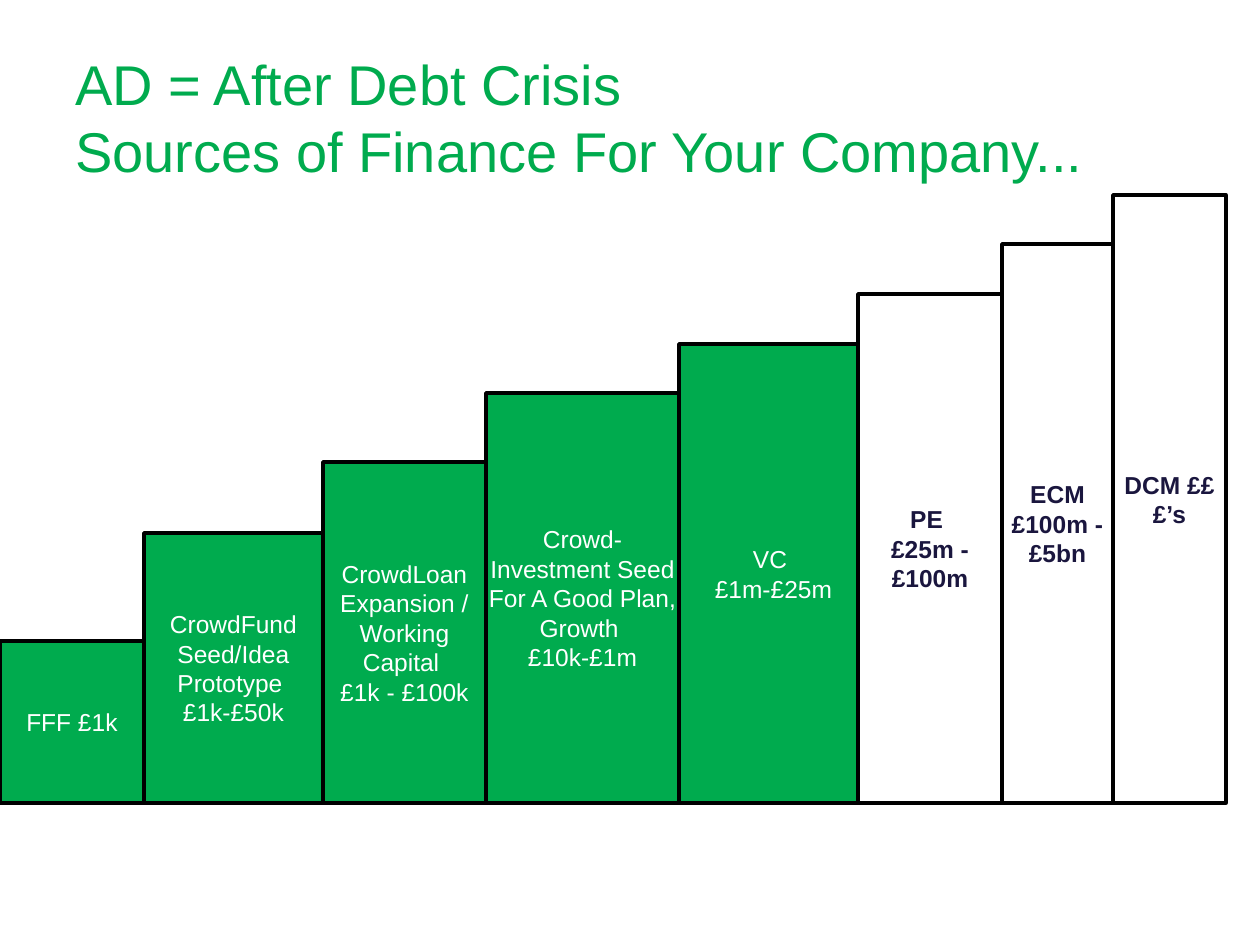
from pptx import Presentation
from pptx import util as u
from pptx.dml.color import RGBColor
from pptx.enum import shapes, text

PX = 914400 / 126
COLORS = {"green": "00AB4E", "white": "FFFFFF", "navy": "1A163E", "black": "000000"}
FONT = "Arial"
BASELINE = 803

TITLE = ["AD = After Debt Crisis", "Sources of Finance For Your Company..."]
TITLE_BOX = (63, 38, 1134, 157)

# left, top, width, highlighted, paragraphs (each a list of lines)
STEPS = [
    (0, 641, 144, True, [["FFF £1k"]]),
    (144, 533, 179, True, [["CrowdFund Seed/Idea Prototype "], ["£1k-£50k"]]),
    (323, 462, 163, True, [["CrowdLoan Expansion / Working Capital "], ["£1k - £100k"]]),
    (486, 393, 193, True, [["Crowd-Investment Seed For A Good Plan, Growth "], ["£10k-£1m"]]),
    (679, 344, 189, True, [["VC "], ["£1m-£25m"]]),
    (858, 294, 144, False, [["PE ", "£25m - £100m"]]),
    (1002, 244, 111, False, [["ECM £100m - £5bn"]]),
    (1113, 195, 113, False, [["DCM £££’s"]]),
]


def px(n):
    return u.Emu(round(n * PX))


def rgb(name):
    return RGBColor.from_string(COLORS[name])


def add_lines(p, lines, size, color, bold=False):
    """Fill a paragraph with runs parted by line breaks."""
    for i, line in enumerate(lines):
        if i:
            p.add_line_break()
        r = p.add_run()
        r.text = line
        r.font.name, r.font.size, r.font.bold = FONT, u.Pt(size), bold
        r.font.color.rgb = rgb(color)


def add_title(slide):
    tf = slide.shapes.add_textbox(*map(px, TITLE_BOX)).text_frame
    tf.word_wrap = True
    tf.vertical_anchor = text.MSO_ANCHOR.MIDDLE
    add_lines(tf.paragraphs[0], TITLE, 32, "green")


def add_step(slide, left, top, width, highlighted, paragraphs):
    sp = slide.shapes.add_shape(shapes.MSO_SHAPE.RECTANGLE, px(left), px(top),
                                px(width), px(BASELINE - top))
    sp.shadow.inherit = False
    sp.fill.solid()
    sp.fill.fore_color.rgb = rgb("green" if highlighted else "white")
    sp.line.color.rgb = rgb("black")
    sp.line.width = u.Pt(2)
    tf = sp.text_frame
    tf.word_wrap = True
    tf.vertical_anchor = text.MSO_ANCHOR.MIDDLE
    tf.margin_left = tf.margin_top = tf.margin_right = tf.margin_bottom = 0
    for i, lines in enumerate(paragraphs):
        p = tf.add_paragraph() if i else tf.paragraphs[0]
        p.alignment = text.PP_ALIGN.CENTER
        add_lines(p, lines, 14, "white" if highlighted else "navy", not highlighted)


def main():
    prs = Presentation()
    prs.slide_width, prs.slide_height = px(1260), px(945)
    slide = prs.slides.add_slide(prs.slide_layouts[6])
    add_title(slide)
    for step in STEPS:
        add_step(slide, *step)
    prs.save("out.pptx")


if __name__ == "__main__":
    main()
